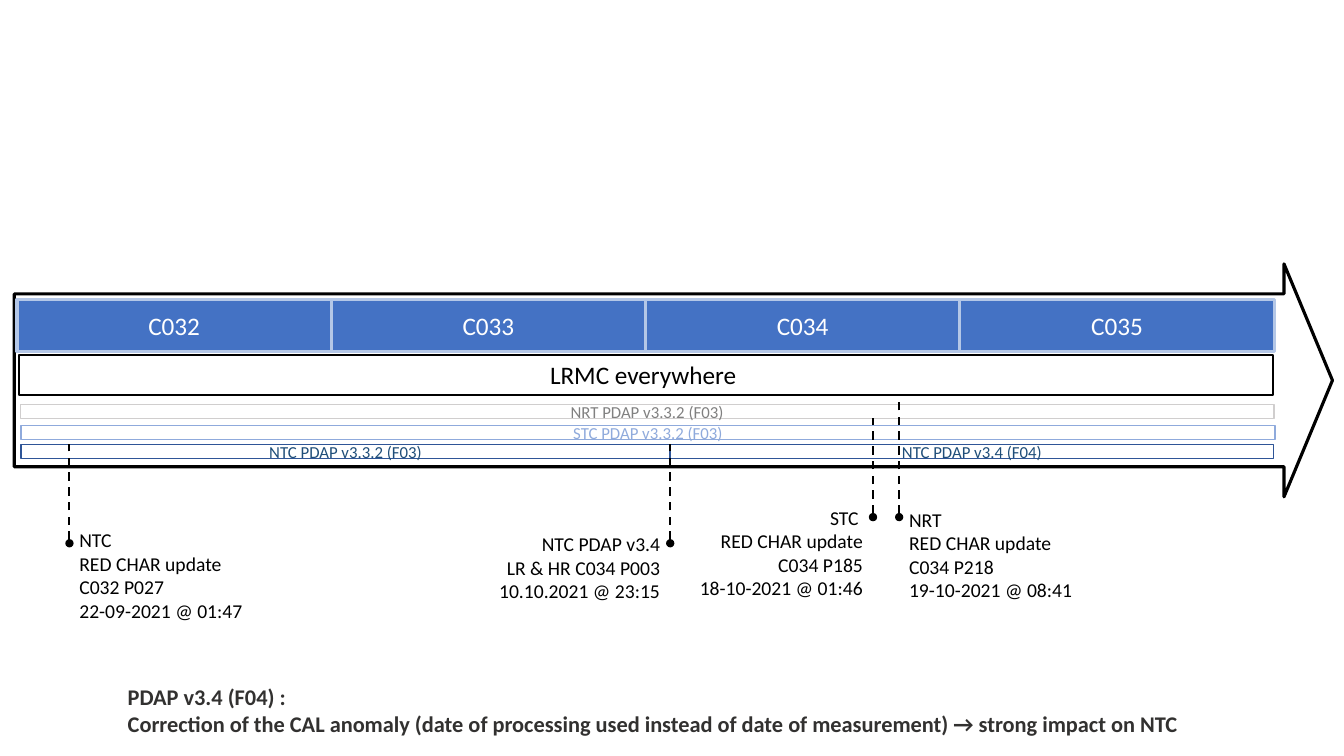
from lxml.etree import SubElement
from pptx import Presentation
from pptx.dml.color import RGBColor
from pptx.enum.dml import MSO_LINE_DASH_STYLE as Dash
from pptx.enum.shapes import MSO_CONNECTOR_TYPE as Connector, MSO_SHAPE as Shape
from pptx.enum.text import MSO_ANCHOR as Anchor, PP_ALIGN as Align
from pptx.oxml.ns import qn
from pptx.util import Cm, Pt

# All lengths are centimetres: left, top, width, height
ARROW = (0.36, 6.65, 33.22, 5.87)
ARROW_ADJUSTMENTS = (0.742, 0.208)

CYCLES = ["C032", "C033", "C034", "C035"]
CYCLE_LEFT, CYCLE_TOP, CYCLE_WIDTH, CYCLE_HEIGHT = 0.43, 7.54, 7.92, 1.32

MODE = ("LRMC everywhere ", (0.48, 8.94, 31.6, 1.02))

# text, left, top, width, fill, line colour, text colour
BAR_HEIGHT = 0.36
BARS = [
    ("STC PDAP v3.3.2 (F03)", 0.53, 10.72, 31.6, None, "8FAADC", "8FAADC"),
    ("NRT PDAP v3.3.2 (F03)", 0.51, 10.19, 31.6, "FFFFFF", "D0CECE", "808080"),
    ("NTC PDAP v3.4 (F04)", 16.89, 11.2, 15.21, "FFFFFF", "2F5597", "1F4E79"),
    ("NTC PDAP v3.3.2 (F03)", 0.53, 11.2, 16.36, "FFFFFF", "2F5597", "1F4E79"),
]

# x, dot y, line top, text top, alignment, lines
LABEL_WIDTH, LABEL_LINE, LABEL_PADDING = 5.54, 0.59, 0.27
MILESTONES = [
    (22.66, 13.03, 10.08, 12.67, Align.LEFT,
     ["NRT", "RED CHAR update", "C034 P218", "19-10-2021 @ 08:41"]),
    (22.0, 13.03, 10.54, 12.62, Align.RIGHT,
     ["STC ", "RED CHAR update", "C034 P185", "18-10-2021 @ 01:46"]),
    (1.75, 13.69, 11.18, 13.18, Align.LEFT,
     ["NTC", "RED CHAR update", "C032 P027", "22-09-2021 @ 01:47"]),
    (16.89, 13.69, 11.2, 13.28, Align.RIGHT,
     ["NTC PDAP v3.4", "LR & HR C034 P003", "10.10.2021 @ 23:15"]),
]

NOTE_AREA = (2.97, 17.09, 29.16, 1.63)
NOTE = [
    "PDAP v3.4 (F04) :",
    "Correction of the CAL anomaly (date of processing used instead of date of "
    "measurement) → strong impact on NTC",
]

deck = Presentation()
deck.slide_width, deck.slide_height = Cm(33.87), Cm(19.05)
slide = deck.slides.add_slide(deck.slide_layouts[6])


def color(hex_code):
    return RGBColor.from_string(hex_code)


def write(box, lines, size, ink="000000", bold=False, align=Align.LEFT, anchor=Anchor.TOP):
    frame = box.text_frame
    frame.word_wrap = True
    frame.vertical_anchor = anchor
    for number, line in enumerate(lines):
        para = frame.add_paragraph() if number else frame.paragraphs[0]
        para.alignment = align
        span = para.add_run()
        span.text = line
        span.font.name = "Calibri"
        span.font.size = Pt(size)
        span.font.bold = bold
        span.font.color.rgb = color(ink)


def add_block(kind, area, fill, line, weight):
    block = slide.shapes.add_shape(kind, *map(Cm, area))
    block.shadow.inherit = False
    if fill:
        block.fill.solid()
        block.fill.fore_color.rgb = color(fill)
    else:
        block.fill.background()
    block.line.color.rgb = color(line)
    block.line.width = Pt(weight)
    return block


def add_label(area, lines, size, **style):
    write(slide.shapes.add_textbox(*map(Cm, area)), lines, size, **style)


def add_marker(x, dot_y, top):
    """Dashed vertical line that starts at a round dot."""
    marker = slide.shapes.add_connector(
        Connector.STRAIGHT, Cm(x), Cm(dot_y), Cm(x), Cm(top))
    marker.line.color.rgb = color("000000")
    marker.line.width = Pt(1.5)
    marker.line.dash_style = Dash.DASH
    SubElement(marker.line._get_or_add_ln(), qn("a:headEnd"), type="oval")
    SubElement(marker._element.spPr, qn("a:effectLst"))


arrow = add_block(Shape.RIGHT_ARROW, ARROW, "FFFFFF", "000000", 2.25)
for index, value in enumerate(ARROW_ADJUSTMENTS):
    arrow.adjustments[index] = value

for index, cycle in enumerate(CYCLES):
    area = (CYCLE_LEFT + index * CYCLE_WIDTH, CYCLE_TOP, CYCLE_WIDTH, CYCLE_HEIGHT)
    block = add_block(Shape.RECTANGLE, area, "4472C4", "B4C7E7", 2.25)
    write(block, [cycle], 18, ink="FFFFFF", align=Align.CENTER, anchor=Anchor.MIDDLE)

mode_text, mode_area = MODE
mode_box = add_block(Shape.RECTANGLE, mode_area, "FFFFFF", "000000", 1.5)
write(mode_box, [mode_text], 18, align=Align.CENTER)

for text, left, top, width, fill, line, ink in BARS:
    bar = add_block(Shape.RECTANGLE, (left, top, width, BAR_HEIGHT), fill, line, 1)
    write(bar, [text], 12, ink=ink, align=Align.CENTER, anchor=Anchor.MIDDLE)

for x, dot_y, line_top, text_top, align, lines in MILESTONES:
    add_marker(x, dot_y, line_top)
    left = x - LABEL_WIDTH if align == Align.RIGHT else x
    height = len(lines) * LABEL_LINE + LABEL_PADDING
    add_label((left, text_top, LABEL_WIDTH, height), lines, 14, align=align)

add_label(NOTE_AREA, NOTE, 16, ink="323130", bold=True)

deck.save("out.pptx")
